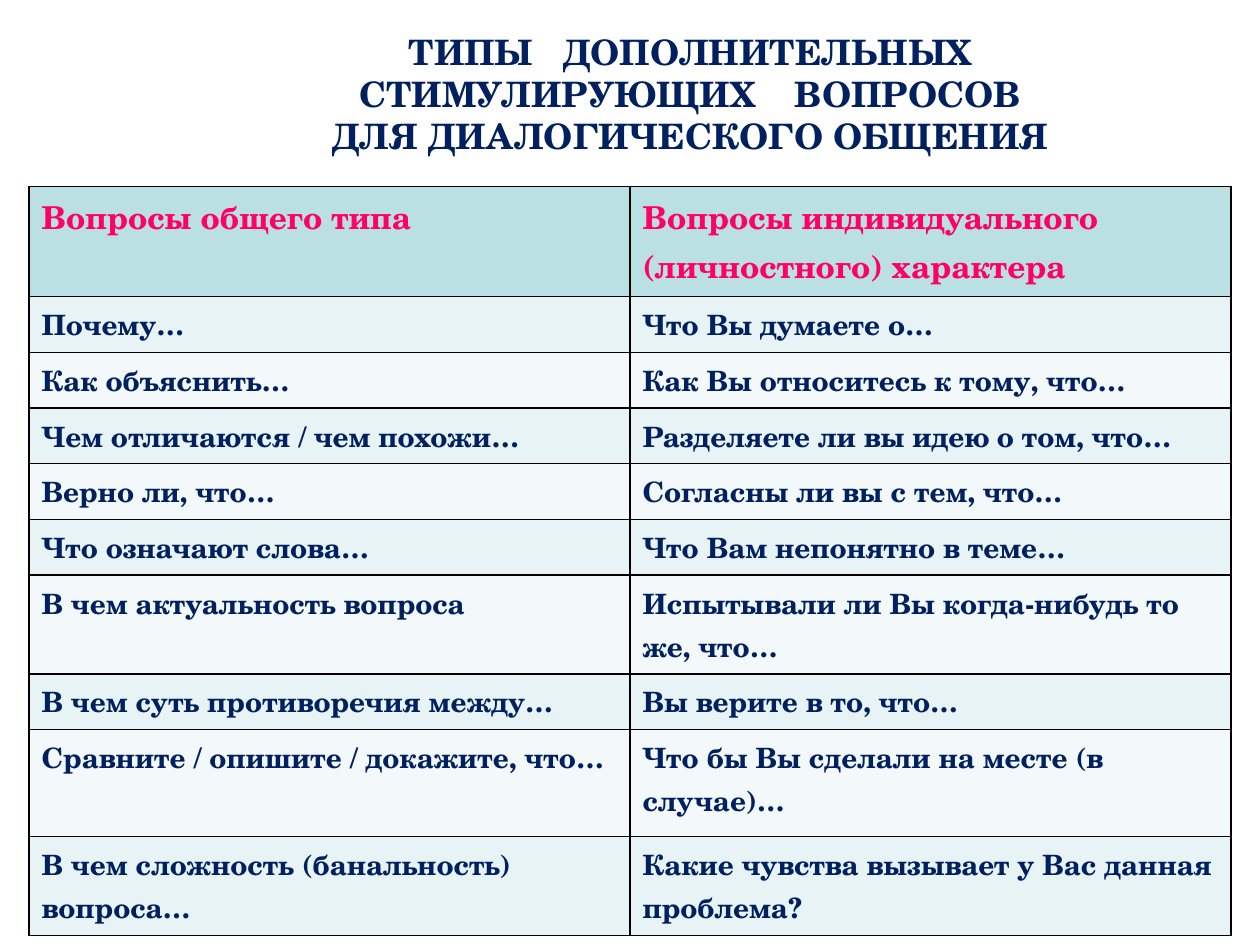
from typing import NamedTuple

from lxml.etree import SubElement
from pptx import Presentation
from pptx.dml.color import RGBColor
from pptx.enum.text import MSO_ANCHOR, PP_ALIGN
from pptx.oxml.ns import qn
from pptx.util import Inches, Pt

FONT = "TeX Gyre Schola"
COLORS = {
    "navy": "002060",
    "pink": "FF0066",
    "header": "BBE0E3",
    "odd": "E7F3F4",
    "even": "F3F9FA",
    "border": "000000",
}
SLIDE_W, SLIDE_H = 10, 7.5
TITLE_SIZE = 20
WIDE_GAPS = {3: 11.12, 4: 16.68}  # width in spaces: extra points after one space


class Row(NamedTuple):
    height: float
    general: str
    personal: str


class Style(NamedTuple):
    size: int
    color: str
    fill: str


# Each title line: first word(s), width of the gap in spaces, last word
TITLE = [
    ("ТИПЫ", 3, "ДОПОЛНИТЕЛЬНЫХ"),
    ("СТИМУЛИРУЮЩИХ", 4, "ВОПРОСОВ"),
    ("ДЛЯ ДИАЛОГИЧЕСКОГО", 1, "ОБЩЕНИЯ"),
]
ROWS = [
    Row(0.66, "Вопросы общего типа", "Вопросы индивидуального (личностного) характера"),
    Row(0.4, "Почему…", "Что Вы думаете о…"),
    Row(0.42, "Как объяснить…", "Как Вы относитесь к тому, что…"),
    Row(0.42, "Чем отличаются / чем похожи…", "Разделяете ли вы идею о том, что…"),
    Row(0.42, "Верно ли, что…", "Согласны ли вы с тем, что…"),
    Row(0.35, "Что означают слова…", "Что Вам непонятно в теме…"),
    Row(0.6, "В чем актуальность вопроса", "Испытывали ли Вы когда-нибудь то же, что…"),
    Row(0.4, "В чем суть противоречия между…", "Вы верите в то, что…"),
    Row(0.85, "Сравните / опишите / докажите, что…", "Что бы Вы сделали на месте (в случае)…"),
    Row(0.6, "В чем сложность (банальность) вопроса…", "Какие чувства вызывает у Вас данная проблема?"),
]


def add_run(p, text: str, size: int, color: str):
    r = p.add_run()
    r.text = text
    r.font.name = FONT
    r.font.size = Pt(size)
    r.font.bold = True
    r.font.color.rgb = RGBColor.from_string(COLORS[color])
    return r


def add_borders(cell) -> None:
    tcPr = cell._tc.get_or_add_tcPr()
    for i, side in enumerate(("lnL", "lnR", "lnT", "lnB")):
        ln = SubElement(tcPr, qn(f"a:{side}"), w=str(Pt(1)))
        fill = SubElement(ln, qn("a:solidFill"))
        SubElement(fill, qn("a:srgbClr"), val=COLORS["border"])
        tcPr.remove(ln)
        tcPr.insert(i, ln)  # lines come before the fill


def fill_cell(cell, text: str, style: Style) -> None:
    cell.fill.solid()
    cell.fill.fore_color.rgb = RGBColor.from_string(COLORS[style.fill])
    add_borders(cell)
    add_run(cell.text_frame.paragraphs[0], text, style.size, style.color)


def row_style(index: int) -> Style:
    if index == 0:
        return Style(18, "pink", "header")
    return Style(16, "navy", "odd" if index % 2 else "even")


def add_title(s) -> None:
    box = s.shapes.add_textbox(Inches(1.33), Inches(0.23), Inches(8.36), Inches(1.02))
    tf = box.text_frame
    tf.word_wrap = True
    tf.vertical_anchor = MSO_ANCHOR.MIDDLE
    tf.margin_right = Inches(0.16)
    p = tf.paragraphs[0]
    p.alignment = PP_ALIGN.CENTER
    for i, (start, gap, end) in enumerate(TITLE):
        if i:
            p.add_line_break()
        add_run(p, start, TITLE_SIZE, "navy")
        space = add_run(p, " ", TITLE_SIZE, "navy")
        if gap in WIDE_GAPS:
            space.font._element.set("spc", str(round(WIDE_GAPS[gap] * 100)))
        add_run(p, end, TITLE_SIZE, "navy")


def add_question_table(s) -> None:
    left, top = 0.23, 1.48
    width = SLIDE_W - 2 * left
    height = sum(row.height for row in ROWS)
    frame = s.shapes.add_table(
        len(ROWS), 2, Inches(left), Inches(top), Inches(width), Inches(height)
    )
    table = frame.table
    for column in table.columns:
        column.width = Inches(width / 2)
    for i, row in enumerate(ROWS):
        table.rows[i].height = Inches(row.height)
        for j, text in enumerate((row.general, row.personal)):
            fill_cell(table.cell(i, j), text, row_style(i))


def main() -> None:
    prs = Presentation()
    prs.slide_width, prs.slide_height = Inches(SLIDE_W), Inches(SLIDE_H)
    s = prs.slides.add_slide(prs.slide_layouts[6])
    add_question_table(s)
    add_title(s)
    prs.save("out.pptx")


if __name__ == "__main__":
    main()
